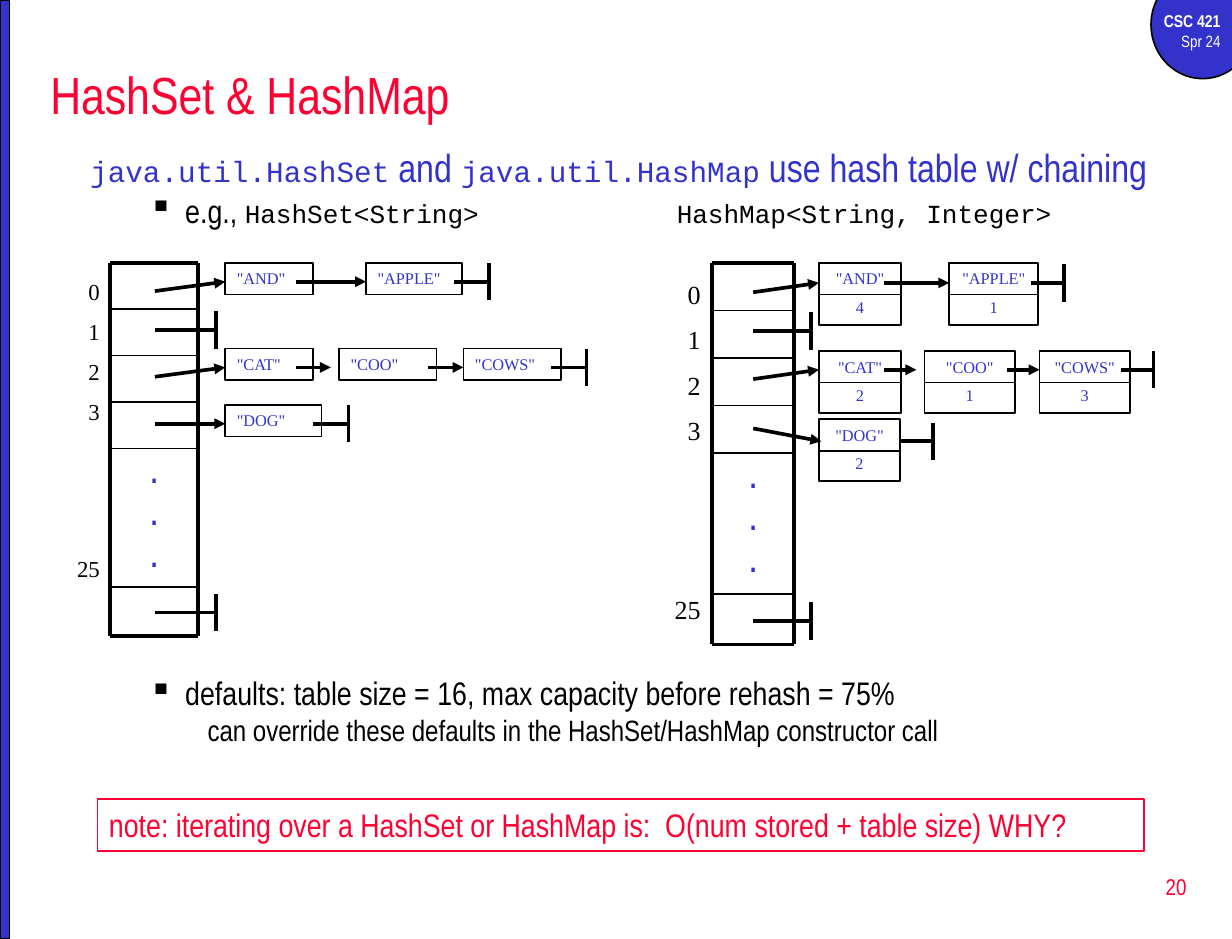
from lxml.etree import SubElement
from pptx import Presentation
from pptx.dml.color import RGBColor
from pptx.enum.shapes import MSO_CONNECTOR, MSO_SHAPE
from pptx.enum.text import MSO_ANCHOR, PP_ALIGN
from pptx.oxml.ns import qn
from pptx.util import Emu, Pt

PX = 9144  # 100 px to the inch
BLACK, BLUE, RED, WHITE = "000000", "3333CC", "FF0033", "FFFFFF"
NARROW, MONO, SERIF = "Arial Narrow", "Courier New", "Times New Roman"
LEFT, CENTER, RIGHT = PP_ALIGN.LEFT, PP_ALIGN.CENTER, PP_ALIGN.RIGHT
THIN, THICK = 1, 2.25

TITLE = "HashSet & HashMap"
USES = [("java.util.HashSet", 18, MONO), (" and ", 24, NARROW),
        ("java.util.HashMap", 18, MONO), (" use hash table w/ chaining", 24, NARROW)]
EXAMPLE = [("e.g., ", 20, NARROW), ("HashSet<String>\t\tHashMap<String, Integer>", 16, MONO)]
DEFAULTS = "defaults: table size = 16, max capacity before rehash = 75%"
OVERRIDE = "can override these defaults in the HashSet/HashMap constructor call"
NOTE = "note: iterating over a HashSet or HashMap is:  O(num stored + table size)\tWHY?"
INDEXES = ["0", "1", "2", "3", "25"]

# node: word, count, left, width, link start, link end
# chain: node top, (arrow start y, arrow end x, arrow end y), nodes
# nulls: y of the empty buckets' links
HASH_SET = dict(
    left=94, right=169, row=39.5, gap_bottom=500, bottom=542,
    index_box=(42, 232, 53, 283), index_size=14, node_height=27,
    pointer=132, null_x=184, nulls=[281, 522],
    chains=[
        (224, (248, 192, 240), [('"AND"', None, 192, 75, 252, 312),
                                ('"APPLE"', None, 312, 82, 387, 417)]),
        (297, (321, 192, 313), [('"CAT"', None, 192, 75, 252, 282),
                                ('"COO"', None, 289, 83, 365, 395),
                                ('"COWS"', None, 395, 83, 470, 500)]),
        (345, (361, 192, 361), [('"DOG"', None, 192, 82, 267, 297)]),
    ])
HASH_MAP = dict(
    left=607, right=677, row=40.5, gap_bottom=506, bottom=549,
    index_box=(558, 232, 49, 318), index_size=16, node_height=53,
    pointer=642, null_x=691, nulls=[282, 529],
    chains=[
        (224, (249, 698, 241), [('"AND"', "4", 698, 70, 753, 809),
                                ('"APPLE"', "1", 809, 76, 879, 907)]),
        (299, (323, 698, 315), [('"CAT"', "2", 698, 70, 753, 781),
                                ('"COO"', "1", 788, 77, 858, 886),
                                ('"COWS"', "3", 886, 77, 955, 983)]),
        (357, (365, 700, 376), [('"DOG"', "2", 698, 69, 767, 795)]),
    ])

deck = Presentation()
deck.slide_width, deck.slide_height = Emu(1050 * PX), Emu(800 * PX)
slide = deck.slides.add_slide(deck.slide_layouts[6])


def rgb(color):
    return RGBColor.from_string(color)


def box(*sides):
    return [Emu(round(side * PX)) for side in sides]


def shape(bounds, line, fill=None, preset=MSO_SHAPE.RECTANGLE):
    figure = slide.shapes.add_shape(preset, *box(*bounds))
    figure.shadow.inherit = False
    if fill:
        figure.fill.solid()
        figure.fill.fore_color.rgb = rgb(fill)
    else:
        figure.fill.background()
    figure.line.color.rgb = rgb(line)
    figure.line.width = Pt(THIN)
    return figure


def text_frame(bounds):
    return slide.shapes.add_textbox(*box(*bounds)).text_frame


def write(frame, paragraphs, anchor=MSO_ANCHOR.TOP):
    """Fill a frame; each paragraph is (runs, format), each run (words, size, font)."""
    frame.word_wrap = True
    frame.vertical_anchor = anchor
    for number, (runs, style) in enumerate(paragraphs):
        para = frame.add_paragraph() if number else frame.paragraphs[0]
        para.alignment = style.get("align", LEFT)
        para.line_spacing = style.get("spacing", 1.0)
        para.space_before = Pt(style.get("before", 0) if number else 0)
        props = para._p.get_or_add_pPr()
        margin, indent = style.get("indent", (0, 0))
        props.set("marL", str(margin * PX))
        props.set("indent", str(indent * PX))
        if style.get("bullet"):
            SubElement(props, qn("a:buChar"), char="▪")
        if "tabs" in style:
            stops = SubElement(props, qn("a:tabLst"))
            for stop in style["tabs"]:
                SubElement(stops, qn("a:tab"), pos=str(stop * PX), algn="l")
        for words, size, face in runs:
            run = para.add_run()
            run.text = words
            run.font.size, run.font.name = Pt(size), face
            run.font.bold = style.get("bold", False)
            run.font.color.rgb = rgb(style.get("color", BLACK))


def line(x1, y1, x2, y2, width=THICK, arrow=False):
    stroke = slide.shapes.add_connector(MSO_CONNECTOR.STRAIGHT, *box(x1, y1, x2, y2))
    stroke.line.color.rgb = rgb(BLACK)
    stroke.line.width = Pt(width)
    if arrow:
        SubElement(stroke.line._get_or_add_ln(), qn("a:tailEnd"), type="triangle")
    SubElement(stroke._element.spPr, qn("a:effectLst"))


def null_link(start, end, y):
    line(start, y, end, y)
    line(end, y - 16, end, y + 16)


def draw_buckets(table):
    left, right, top = table["left"], table["right"], 224
    rows = [top + i * table["row"] for i in range(5)]
    for y in rows[1:] + [table["gap_bottom"]]:
        line(left, y, right, y, THIN)
    for y in (top, table["bottom"]):
        line(left, y, right, y)
    for x in (left, right):
        line(x, top, x, table["bottom"])
    dot = ([(".", 18, NARROW)], dict(align=CENTER, before=4.2, color=BLUE, bold=True))
    write(text_frame((left, rows[-1], right - left, table["gap_bottom"] - rows[-1])), [dot] * 3)
    size = table["index_size"]
    write(text_frame(table["index_box"]),
          [([(index, size, SERIF)],
            dict(align=RIGHT, before=size * (5.65 if index == "25" else 0.55)))
           for index in INDEXES])
    for y in table["nulls"]:
        null_link(table["pointer"], table["null_x"], y)


def draw_chains(table):
    for top, (start_y, end_x, link_y), nodes in table["chains"]:
        line(table["pointer"], start_y, end_x, link_y, arrow=True)
        for node in nodes:
            word, count, left, width, link_start, link_end = node
            cell = shape((left, top, width, table["node_height"]), BLACK)
            style = dict(align=CENTER if count else LEFT, before=5.7, color=BLUE)
            write(cell.text_frame, [([(words, 10, SERIF)], style)
                                    for words in (word, count) if words])
            if count:
                line(left, top + 27, left + width, top + 27, THIN)
            if node is nodes[-1]:
                null_link(link_start, link_end, link_y)
            else:
                line(link_start, link_y, link_end, link_y, arrow=True)


shape((981, -25, 88, 92), BLACK, BLUE, MSO_SHAPE.OVAL)
write(text_frame((967, 4, 83, 46)),
      [([("CSC 421", 10.5, NARROW)], dict(align=RIGHT, color=WHITE, bold=True)),
       ([("Spr 24", 10, NARROW)], dict(align=RIGHT, color=WHITE))])
shape((0, 0, 8, 800), BLACK, BLUE)
write(text_frame((802, 729, 219, 53)),
      [([("20", 14, NARROW)], dict(align=RIGHT, color=RED))], MSO_ANCHOR.MIDDLE)
write(text_frame((33, 42, 992, 75)),
      [([(TITLE, 32, NARROW)], dict(color=RED))], MSO_ANCHOR.MIDDLE)

bullet = dict(indent=(81, -31), spacing=0.8, before=5, bullet=True)
write(text_frame((67, 117, 952, 92)),
      [(USES, dict(indent=(38, -38), color=BLUE)),
       (EXAMPLE, dict(bullet, tabs=(400, 500)))])
for table in (HASH_SET, HASH_MAP):
    draw_buckets(table)
    draw_chains(table)
write(shape((83, 681, 892, 44), RED).text_frame,
      [([(NOTE, 20, NARROW)], dict(color=RED, tabs=(800,)))])
write(text_frame((67, 575, 952, 100)),
      [([(DEFAULTS, 20, NARROW)], bullet),
       ([(OVERRIDE, 18, NARROW)], dict(indent=(125, -25), spacing=0.8, before=4.5))])

deck.save("out.pptx")
